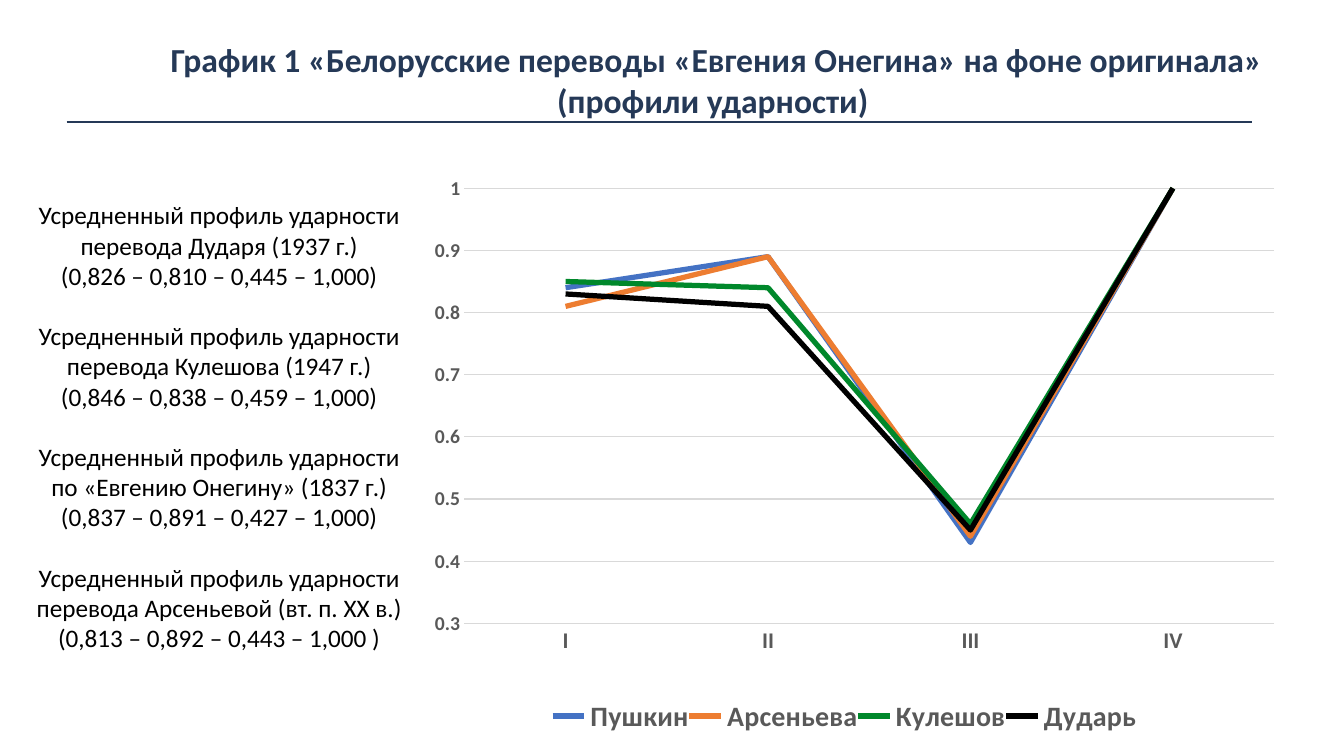
from lxml import etree
from pptx import Presentation
from pptx.chart.data import CategoryChartData
from pptx.dml.color import RGBColor
from pptx.enum.chart import XL_CHART_TYPE, XL_LEGEND_POSITION, XL_TICK_MARK
from pptx.enum.shapes import MSO_CONNECTOR
from pptx.enum.text import MSO_ANCHOR, PP_ALIGN
from pptx.oxml.ns import qn
from pptx.util import Cm, Pt

LINE_CHART = XL_CHART_TYPE.LINE
BOTTOM = XL_LEGEND_POSITION.BOTTOM
NO_TICK = XL_TICK_MARK.NONE
STRAIGHT = MSO_CONNECTOR.STRAIGHT
TOP, MIDDLE = MSO_ANCHOR.TOP, MSO_ANCHOR.MIDDLE
CENTER = PP_ALIGN.CENTER

NAVY, BLACK, GRAY, GRID = "253957", "000000", "595959", "D9D9D9"

TITLE = "График 1 «Белорусские переводы «Евгения Онегина» на фоне оригинала» (профили ударности) "
PROFILES = [
    ("перевода Дударя (1937 г.)", "(0,826 – 0,810 – 0,445 – 1,000)"),
    ("перевода Кулешова (1947 г.)", "(0,846 – 0,838 – 0,459 – 1,000)"),
    ("по «Евгению Онегину» (1837 г.)", "(0,837 – 0,891 – 0,427 – 1,000)"),
    ("перевода Арсеньевой (вт. п. XX в.)", "(0,813 – 0,892 – 0,443 – 1,000 )"),
]
FEET = ["I", "II", "III", "IV"]
SERIES = [
    ("Пушкин", (0.84, 0.89, 0.43, 1), "4472C4"),
    ("Арсеньева", (0.81, 0.89, 0.44, 1), "ED7D31"),
    ("Кулешов", (0.85, 0.84, 0.46, 1), "00882B"),
    ("Дударь", (0.83, 0.81, 0.45, 1), BLACK),
]


def rgb(value):
    return RGBColor.from_string(value)


def style_font(font, name, size, color, bold=False):
    font.name = name
    font.size = Pt(size)
    font.bold = bold
    font.color.rgb = rgb(color)


def write(p, text, font="Calibri", size=18, color=BLACK, bold=False, before=0):
    p.alignment = CENTER
    p.space_before = Pt(before)
    r = p.add_run()
    r.text = text
    style_font(r.font, font, size, color, bold)


def style_line(line, color, width):
    line.color.rgb = rgb(color)
    line.width = Pt(width)


def set_layout(parent, index, box, inner=False):
    for old in parent.findall(qn("c:layout")):
        parent.remove(old)
    layout = etree.Element(qn("c:layout"))
    manual = etree.SubElement(layout, qn("c:manualLayout"))
    values = [("layoutTarget", "inner")] if inner else []
    values += [("xMode", "edge"), ("yMode", "edge")]
    values += zip("xywh", box)
    for tag, value in values:
        etree.SubElement(manual, qn(f"c:{tag}")).set("val", str(value))
    parent.insert(index, layout)


class Deck:
    font = "Calibri"

    def __init__(self):
        self.prs = Presentation()
        self.prs.slide_width, self.prs.slide_height = Cm(33.87), Cm(19.05)
        self.s = self.prs.slides.add_slide(self.prs.slide_layouts[6])

    def text(self, x, y, w, h, items, inset, bottom, anchor=TOP):
        sp = self.s.shapes.add_textbox(Cm(x), Cm(y), Cm(w), Cm(h))
        tf = sp.text_frame
        tf.word_wrap = True
        tf.vertical_anchor = anchor
        tf.margin_left = tf.margin_right = tf.margin_top = Cm(inset)
        tf.margin_bottom = Cm(bottom)
        for i, (text, fmt) in enumerate(items):
            p = tf.add_paragraph() if i else tf.paragraphs[0]
            write(p, text, font=self.font, **fmt)

    def rule(self, x1, y1, x2, y2, color, width):
        line = self.s.shapes.add_connector(STRAIGHT, Cm(x1), Cm(y1), Cm(x2), Cm(y2))
        style_line(line.line, color, width)
        etree.SubElement(line._element.spPr, qn("a:effectLst"))

    def line_chart(self, x, y, w, h, categories, series):
        data = CategoryChartData()
        data.categories = categories
        for name, values, _ in series:
            data.add_series(name, values)
        frame = self.s.shapes.add_chart(LINE_CHART, Cm(x), Cm(y), Cm(w), Cm(h), data)
        chart = frame.chart
        chart.has_title = False
        style_font(chart.font, self.font, 10, BLACK)
        chart.plots[0].vary_by_categories = False
        for ser, (_, _, color) in zip(chart.plots[0].series, series):
            ser.smooth = False
            style_line(ser.format.line, color, 3.75)
        self.axes(chart)
        chart.has_legend = True
        legend = chart.legend
        legend.position = BOTTOM
        legend.include_in_layout = False
        style_font(legend.font, self.font, 20, GRAY, True)
        set_layout(legend._element, 1, (0.16, 0.83, 0.66, 0.06))
        plot_area = chart._chartSpace.chart.plotArea
        set_layout(plot_area, 0, (0.061, 0.052, 0.914, 0.666), inner=True)

    def axes(self, chart):
        cat, val = chart.category_axis, chart.value_axis
        for axis, size in ((cat, 16), (val, 14)):
            axis.major_tick_mark = axis.minor_tick_mark = NO_TICK
            style_font(axis.tick_labels.font, self.font, size, GRAY, True)
        style_line(cat.format.line, GRID, 0.75)
        val.format.line.fill.background()
        val.minimum_scale, val.maximum_scale, val.major_unit = 0.3, 1, 0.1
        val.has_major_gridlines = True
        style_line(val.major_gridlines.format.line, GRID, 0.75)


def main():
    deck = Deck()
    title = (TITLE, {"size": 24, "color": NAVY, "bold": True})
    deck.text(4.09, 0.89, 27.94, 1.22, [title], inset=0.1, bottom=0.1)
    deck.rule(1.68, 3.07, 31.55, 3.07, NAVY, 1)
    notes = []
    for i, (work, figures) in enumerate(PROFILES):
        heading = f"Усредненный профиль ударности {work}"
        notes += [(heading, {"before": 21.5 if i else 0}), (figures, {})]
    deck.text(0.71, 4.75, 9.63, 13.56, notes, inset=0.18, bottom=1.76, anchor=MIDDLE)
    deck.line_chart(10.34, 3.89, 22.33, 16.46, FEET, SERIES)
    deck.prs.save("out.pptx")


if __name__ == "__main__":
    main()
